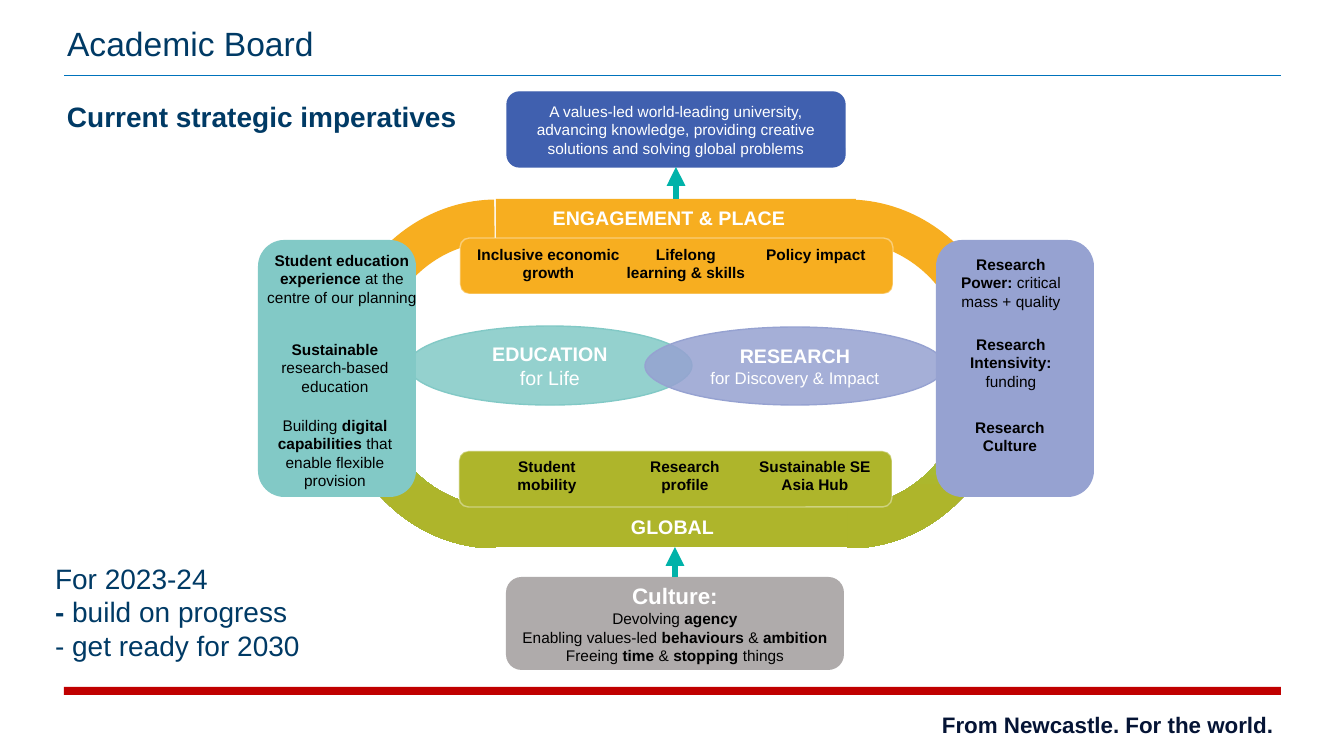
"""Builds the Academic Board slide on current strategic imperatives."""
from lxml import etree
from pptx import Presentation
from pptx import util as u
from pptx.dml.color import RGBColor
from pptx.enum import shapes, text
from pptx.oxml import parse_xml
from pptx.oxml.ns import nsdecls, qn

PX = 914400 / 100.8
NAVY = RGBColor(0x00, 0x3A, 0x65)
INK = RGBColor(0x05, 0x14, 0x35)
BLACK = RGBColor(0, 0, 0)
WHITE = RGBColor(0xFF, 0xFF, 0xFF)
RED = RGBColor(0xC0, 0x00, 0x00)
RULE_BLUE = RGBColor(0x00, 0x73, 0xBC)
BLUE = RGBColor(0x40, 0x60, 0xAF)
ORANGE = RGBColor(0xF7, 0xAE, 0x20)
OLIVE = RGBColor(0xAE, 0xB5, 0x2B)
GREEN = RGBColor(0x92, 0xD0, 0x50)
TEAL = RGBColor(0x82, 0xC9, 0xC6)
LILAC = RGBColor(0x96, 0xA2, 0xD1)
GREY = RGBColor(0xAF, 0xAB, 0xAB)
ARROW = RGBColor(0x00, 0xB2, 0xA9)
KIND = shapes.MSO_SHAPE
LEFT, CENTER = text.PP_ALIGN.LEFT, text.PP_ALIGN.CENTER
MIDDLE = text.MSO_ANCHOR.MIDDLE

deck = Presentation()
deck.slide_width, deck.slide_height = round(1344 * PX), round(756 * PX)
slide = deck.slides.add_slide(deck.slide_layouts[1])


def block(kind, x, y, w, h, fill, line=None):
    """Adds a filled shape, outlined only when a line colour is given."""
    shape = slide.shapes.add_shape(kind, *(round(v * PX) for v in (x, y, w, h)))
    shape.shadow.inherit = False
    shape.fill.solid()
    shape.fill.fore_color.rgb = fill
    if line is None:
        shape.line.fill.background()
    else:
        shape.line.color.rgb = line
        shape.line.width = u.Pt(1)
    return shape


def write(frame, lines, size, color, align=CENTER):
    """Writes one paragraph per line; ** switches bold on and off."""
    frame.word_wrap = True
    for number, line in enumerate(lines):
        paragraph = frame.add_paragraph() if number else frame.paragraphs[0]
        paragraph.alignment = align
        paragraph.space_before = u.Pt(0)
        paragraph.font.name = "Arial"
        paragraph.font.size = u.Pt(size)
        paragraph.font.color.rgb = color
        parts = [(part, i % 2 == 1) for i, part in enumerate(line.split("**")) if part]
        for part, bold in parts:
            run = paragraph.add_run()
            run.text = part
            if len(parts) == 1:
                paragraph.font.bold = bold
            else:
                run.font.bold = bold


block(KIND.RECTANGLE, 64, 687, 1217, 8, RED)

title = slide.shapes.title
outlook = slide.placeholders[1]
for holder, box in ((title, (57, 20, 997, 46)), (outlook, (55, 562, 286, 100))):
    holder.left, holder.top, holder.width, holder.height = (round(v * PX) for v in box)
    holder.text_frame.auto_size = text.MSO_AUTO_SIZE.NONE
title.text_frame.vertical_anchor = MIDDLE
write(title.text_frame, ["Academic Board"], 24, NAVY, LEFT)

plans = outlook.text_frame
plans.vertical_anchor = text.MSO_ANCHOR.BOTTOM
plans.margin_left = plans.margin_right = plans.margin_top = plans.margin_bottom = 0
write(plans, ["For 2023-24", "**- **build on progress", "- get ready for 2030"], 20, NAVY, LEFT)
for paragraph in plans.paragraphs:
    properties = paragraph._p.get_or_add_pPr()
    properties.set("marL", "0")
    properties.set("indent", "0")
    properties.find(qn("a:spcBef")).addnext(parse_xml(f"<a:buNone {nsdecls('a')}/>"))

vision = block(KIND.ROUNDED_RECTANGLE, 507, 92, 338, 75, BLUE, BLUE)
write(vision.text_frame, ["A values-led world-leading university, advancing knowledge, "
                          "providing creative solutions and solving global problems"], 11, WHITE)

education = block(KIND.OVAL, 408, 326, 284, 79, TEAL, TEAL)
write(education.text_frame, ["**EDUCATION**", "for Life"], 14, WHITE)
research = block(KIND.OVAL, 645, 327, 300, 78, LILAC, LILAC)
research.text_frame.margin_left = research.text_frame.margin_right = 0
write(research.text_frame, ["**RESEARCH**", "for Discovery & Impact"], 14, WHITE)
research.text_frame.paragraphs[1].font.size = u.Pt(12)

culture = block(KIND.ROUNDED_RECTANGLE, 506, 577, 338, 93, GREY)
write(culture.text_frame, ["**Culture:**", "Devolving **agency**",
                           "Enabling values-led **behaviours** & **ambition**",
                           "Freeing **time **& **stopping **things"], 11, BLACK)
culture.text_frame.paragraphs[0].font.size = u.Pt(16)
culture.text_frame.paragraphs[0].font.color.rgb = WHITE
for oval in (vision, education, research, culture):
    oval.text_frame.vertical_anchor = MIDDLE

engagement_band = block(KIND.RECTANGLE, 496, 199, 360, 41, ORANGE)
global_band = block(KIND.RECTANGLE, 495, 506, 360, 41, OLIVE)
stops = "".join(f'<a:gs pos="{place}000"><a:srgbClr val="{color}"/></a:gs>' for place, color in
                ((0, ORANGE), (33, ORANGE), (58, GREEN), (83, OLIVE), (100, OLIVE)))
for x, turn in ((322, 270), (673, 90)):
    bend = block(KIND.BLOCK_ARC, x, 211, 349, 326, ORANGE)
    bend.rotation = turn
    for i, value in enumerate((108, 215.54, 0.13)):
        bend.adjustments[i] = value
    bend_form = bend._element.spPr
    if turn == 90:
        bend_form.find(qn("a:xfrm")).set("flipH", "1")
    bend_form.replace(bend_form.find(qn("a:solidFill")), parse_xml(
        f"<a:gradFill {nsdecls('a')} rotWithShape=\"1\"><a:gsLst>{stops}</a:gsLst>"
        '<a:lin ang="10800000" scaled="0"/></a:gradFill>'))

for x, color in ((258, TEAL), (936, LILAC)):
    block(KIND.ROUNDED_RECTANGLE, x, 240, 158, 257, color)
engagement_aims = block(KIND.ROUNDED_RECTANGLE, 460, 238, 433, 56, ORANGE, WHITE)
global_aims = block(KIND.ROUNDED_RECTANGLE, 459, 451, 433, 56, OLIVE, WHITE)
for shape, layer, alpha in ((education, 0, 85000), (research, 0, 85000),
                            (engagement_aims, -1, 40000), (global_aims, -1, 40000)):
    tint = list(shape._element.spPr.iter(qn("a:srgbClr")))[layer]
    etree.SubElement(tint, qn("a:alpha")).set("val", str(alpha))

for x, y, w, h, lines, size, color in (
        (286, 201, 766, 34, ["**ENGAGEMENT & PLACE**"], 14, WHITE),
        (403, 510, 539, 34, ["**GLOBAL**"], 14, WHITE),
        (256, 246, 172, 67, ["**Student education experience **at the centre of our planning"], 11, BLACK),
        (256, 335, 158, 67, ["**Sustainable** research-based education"], 11, BLACK),
        (256, 411, 158, 85, ["Building **digital capabilities **that enable flexible provision"], 11, BLACK),
        (466, 240, 165, 47, ["**Inclusive economic growth**"], 11, BLACK),
        (616, 240, 140, 47, ["**Lifelong learning & skills**"], 11, BLACK),
        (750, 240, 132, 29, ["**Policy impact**"], 11, BLACK),
        (487, 452, 120, 47, ["**Student mobility**"], 11, BLACK),
        (615, 452, 140, 47, ["**Research profile**"], 11, BLACK),
        (749, 452, 132, 47, ["**Sustainable SE Asia Hub**"], 11, BLACK),
        (951, 250, 120, 67, ["**Research**", "**Power: **critical mass + quality"], 11, BLACK),
        (951, 330, 120, 67, ["**Research**", "**Intensivity: **funding"], 11, BLACK),
        (950, 413, 120, 47, ["**Research**", "**Culture**"], 11, BLACK),
        (57, 95, 440, 40, ["**Current strategic imperatives**"], 20, NAVY),
        (932, 706, 361, 37, ["**From Newcastle. For the world.**"], 16, INK)):
    label = slide.shapes.add_textbox(*(round(v * PX) for v in (x, y, w, h)))
    write(label.text_frame, lines, size, color, LEFT if size > 14 else CENTER)

rule = slide.shapes.add_connector(shapes.MSO_CONNECTOR.STRAIGHT,
                                  *(round(v * PX) for v in (1281, 75, 64, 75)))
rule.line.color.rgb = RULE_BLUE
rule.line.width = u.Pt(0.25)
etree.SubElement(rule._element.spPr, qn("a:effectLst"))

for source, target in ((engagement_band, vision), (culture, global_band)):
    arrow = slide.shapes.add_connector(shapes.MSO_CONNECTOR.STRAIGHT, 0, 0, 0, 0)
    arrow.begin_connect(source, 0)
    arrow.end_connect(target, 2)
    arrow.line.color.rgb = ARROW
    arrow.line.width = u.Pt(4.5)
    etree.SubElement(arrow.line._get_or_add_ln(), qn("a:tailEnd")).set("type", "triangle")
    etree.SubElement(arrow._element.spPr, qn("a:effectLst"))

deck.save("out.pptx")
